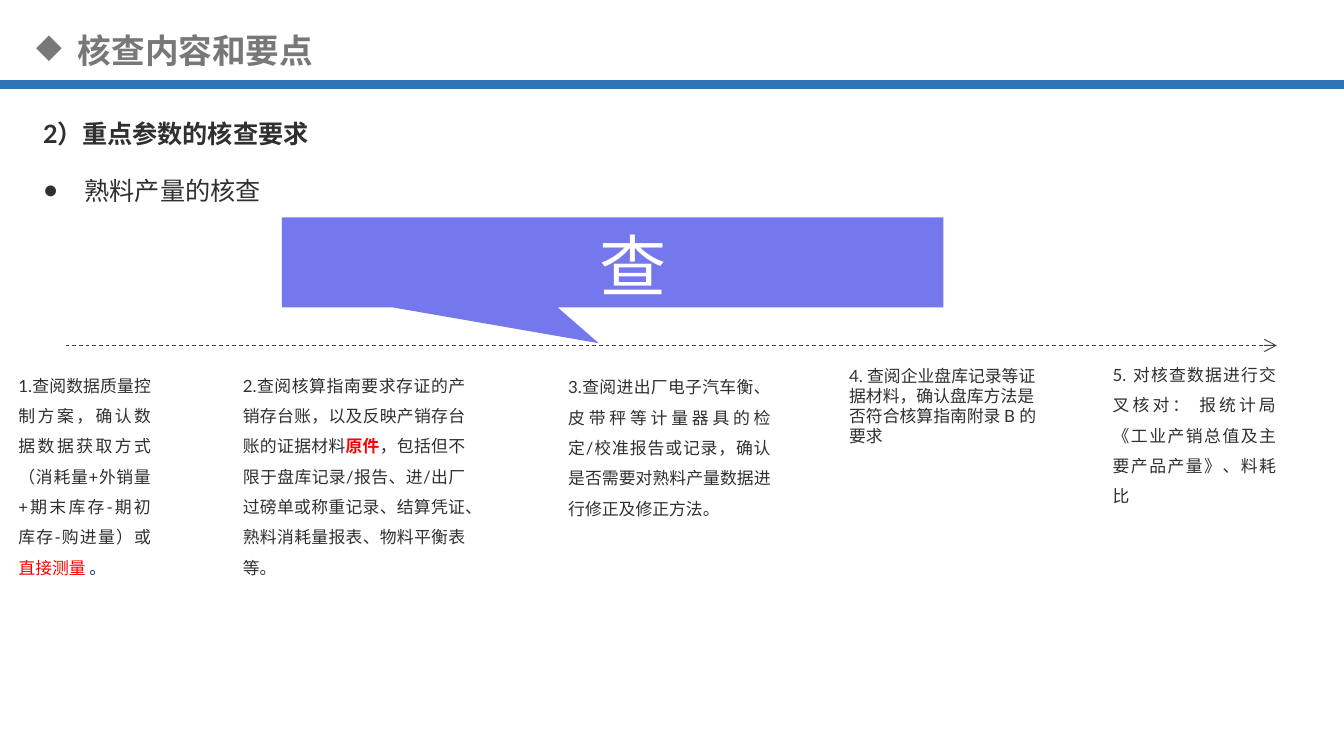
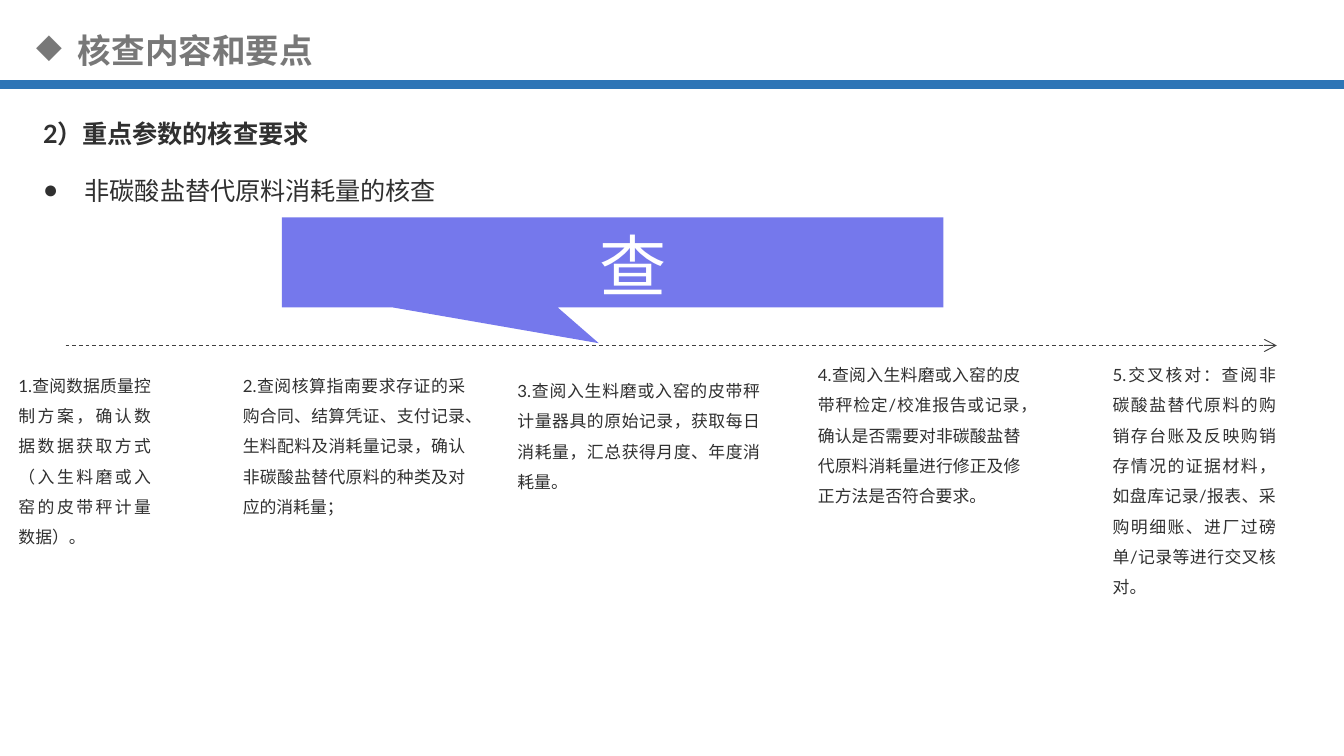
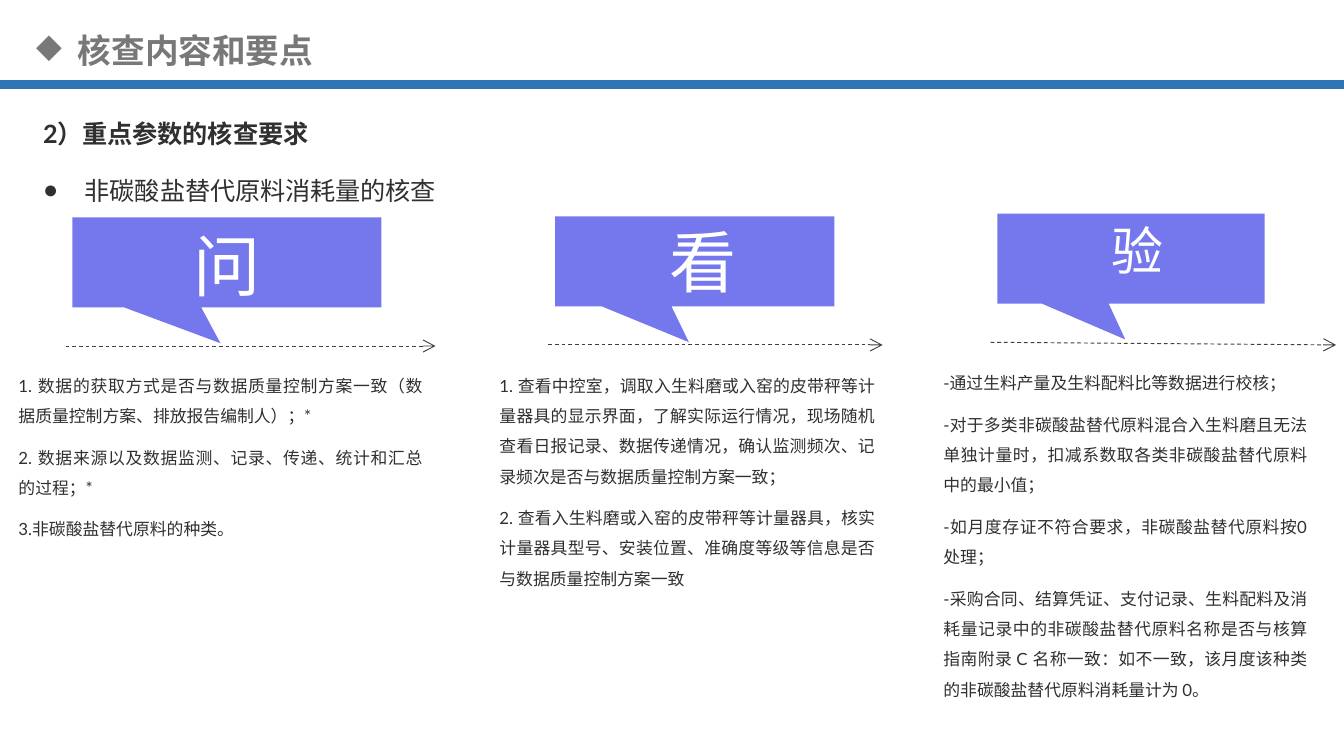
import pptx
import pptx.dml.color
import pptx.enum.dml
import pptx.enum.lang
import pptx.enum.shapes
import pptx.enum.text
import pptx.oxml
import pptx.oxml.ns
import pptx.util

Cm, Pt = pptx.util.Cm, pptx.util.Pt
RGBColor = pptx.dml.color.RGBColor
PP_ALIGN = pptx.enum.text.PP_ALIGN
ANCHOR = pptx.enum.text.MSO_ANCHOR
AUTO = pptx.enum.text.MSO_AUTO_SIZE
qn = pptx.oxml.ns.qn

TITLE_GREY = RGBColor(0x78, 0x78, 0x78)
BAND_BLUE = RGBColor(0x2E, 0x75, 0xB6)
INK = RGBColor(0x30, 0x30, 0x30)
RED = RGBColor(0xFF, 0x00, 0x00)
VIOLET = RGBColor(0x75, 0x78, 0xEC)
ARROW_GREY = RGBColor(0x40, 0x40, 0x40)
WHITE = RGBColor(0xFF, 0xFF, 0xFF)

CJK_FONT = "Noto Sans CJK SC"
SLIDE_W, SLIDE_H = 25.4, 14.29
INDENT = 0.79
CHINESE = pptx.enum.lang.MSO_LANGUAGE_ID.SIMPLIFIED_CHINESE

TITLE_FONT = dict(name="Arial", size=Pt(18), bold=True, color=TITLE_GREY)
HEADING_FONT = dict(name="Lato", size=Pt(13.5), bold=True, color=INK)
TOPIC_FONT = dict(HEADING_FONT, bold=False)
NOTE_FONT = dict(name="Lato", size=Pt(9), bold=False, color=INK)
WORD_FONT = dict(name=CJK_FONT, size=Pt(36), bold=False, color=WHITE)

PLAIN = dict(alignment=PP_ALIGN.LEFT, line_spacing=1.0)
CENTRED = dict(PLAIN, alignment=PP_ALIGN.CENTER)
JUSTIFIED = dict(alignment=PP_ALIGN.JUSTIFY, line_spacing=1.5)
FRAME = dict(word_wrap=True, auto_size=AUTO.SHAPE_TO_FIT_TEXT,
             vertical_anchor=ANCHOR.TOP)

TITLE = "核查内容和要点"
HEADING = "2）重点参数的核查要求"


def apply(obj, formats):
    for name, value in formats.items():
        setattr(obj, name, value)


def place(sp, box):
    apply(sp, dict(zip(("left", "top", "width", "height"), map(Cm, box))))


def add_run(p, text, fmt):
    r = p.add_run()
    r.text = text
    r.font.color.rgb = fmt["color"]
    apply(r.font, {k: v for k, v in fmt.items() if k != "color"})
    r.font.language_id = CHINESE
    ea = r.font._element.makeelement(qn("a:ea"), {"typeface": CJK_FONT})
    r.font._element.append(ea)


def set_bullet(p, char=None):
    """Give the paragraph a hanging bullet, or none."""
    pPr = p._p.get_or_add_pPr()
    indent = Cm(INDENT) if char else 0
    pPr.set("marL", str(indent))
    pPr.set("indent", str(-indent))
    tag, attrs = ("a:buChar", {"char": char}) if char else ("a:buNone", {})
    pPr.append(pPr.makeelement(qn(tag), attrs))


def next_paragraph(tf, i, layout):
    p = tf.add_paragraph() if i else tf.paragraphs[0]
    apply(p, dict(layout, space_before=Pt(6 if i else 0)))
    return p


def add_line(s, start, end, color, width):
    line = s.shapes.add_connector(pptx.enum.shapes.MSO_CONNECTOR.STRAIGHT,
                                  *map(Cm, (*start, *end)))
    line.line.color.rgb = color
    line.line.width = Pt(width)
    spPr = line._element.spPr
    spPr.append(spPr.makeelement(qn("a:effectLst"), {}))
    return line


def add_header(s, topic):
    tf = s.shapes.title.text_frame
    place(s.shapes.title, (0.43, 0.43, 24.51, 1.02))
    apply(tf, FRAME)
    p = next_paragraph(tf, 0, PLAIN)
    set_bullet(p, "◆")
    add_run(p, TITLE, TITLE_FONT)

    add_line(s, (0, 1.6), (SLIDE_W, 1.6), BAND_BLUE, 4.5)

    body = s.placeholders[1]
    place(body, (0.56, 1.83, 23.57, 2.11))
    apply(body.text_frame, FRAME)
    lines = ((HEADING, None, HEADING_FONT), (topic, "●", TOPIC_FONT))
    for i, (text, bullet, fmt) in enumerate(lines):
        p = next_paragraph(body.text_frame, i, JUSTIFIED)
        set_bullet(p, bullet)
        add_run(p, text, fmt)


def add_text(s, box, paragraphs, fmt=NOTE_FONT, layout=JUSTIFIED, frame=FRAME):
    """Each paragraph is a string or a list of (text, format changes)."""
    tf = s.shapes.add_textbox(*map(Cm, box)).text_frame
    apply(tf, frame)
    for i, runs in enumerate(paragraphs):
        p = next_paragraph(tf, i, layout)
        for text, changes in [(runs, {})] if isinstance(runs, str) else runs:
            add_run(p, text, {**fmt, **changes})


def add_callout(s, box, word, word_shift, word_w, size=36, layout=PLAIN):
    x, y, w, h = box
    dx, dy = word_shift
    sp = s.shapes.add_shape(
        pptx.enum.shapes.MSO_SHAPE.RECTANGULAR_CALLOUT, *map(Cm, box))
    sp.adjustments[0], sp.adjustments[1] = -0.021, 0.899
    sp.shadow.inherit = False
    sp.fill.solid()
    sp.fill.fore_color.rgb = VIOLET
    sp.line.fill.background()
    add_text(s, (x + dx, y + dy, word_w, 1.63), [word],
             dict(WORD_FONT, size=Pt(size)), layout,
             dict(FRAME, auto_size=AUTO.NONE))


def add_flow_arrow(s, start, end):
    line = add_line(s, start, end, ARROW_GREY, 0.5).line
    line.dash_style = pptx.enum.dml.MSO_LINE.DASH
    ln = line._get_or_add_ln()
    ln.append(ln.makeelement(qn("a:tailEnd"), {"type": "arrow"}))


def new_slide(prs, topic):
    s = prs.slides.add_slide(prs.slide_layouts[1])
    add_header(s, topic)
    return s


def document_check_slide(prs, topic, notes):
    """One wide callout over an arrow, with a row of numbered notes."""
    s = new_slide(prs, topic)
    add_callout(s, (5.33, 4.11, 12.5, 1.7), "查", (2.04, 0), 9.19,
                layout=CENTRED)
    add_flow_arrow(s, (1.24, 6.53), (24.13, 6.53))
    for box, runs, layout in notes:
        add_text(s, box, [runs], layout=layout)


def method_panel(s, box, word, shift, word_w, size, arrow, note_box, notes):
    """Callout in the box; arrow is (length, rise); note_box is offset from it."""
    x, y, w, h = box
    add_callout(s, box, word, shift, word_w, size)
    start = x - 0.13, y + 2.43
    add_flow_arrow(s, start, (start[0] + arrow[0], start[1] + arrow[1]))
    dx, dy, note_w, note_h = note_box
    add_text(s, (x + dx, y + dy, note_w, note_h), notes)


CLINKER_NOTES = [
    ((0.1, 6.78, 3, 4.22), [
        ("1.查阅数据质量控制方案，确认数据数据获取方式（消耗量+外销量+期末库存-期初库存-购进量）或", {}),
        ("直接测量", dict(color=RED)),
        (" 。", {})], JUSTIFIED),
    ((4.34, 6.78, 4.7, 4.22), [
        ("2.查阅核算指南要求存证的产销存台账，以及反映产销存台账的证据材料", {}),
        ("原件", dict(color=RED, bold=True)),
        ("，包括但不限于盘库记录/报告、进/出厂过磅单或称重记录、结算凭证、"
         "熟料消耗量报表、物料平衡表等。", {})], JUSTIFIED),
    ((10.49, 6.81, 4.32, 3.07),
     "3.查阅进出厂电子汽车衡、皮带秤等计量器具的检定/校准报告或记录，"
     "确认是否需要对熟料产量数据进行修正及修正方法。", JUSTIFIED),
    ((15.8, 6.78, 4.06, 1.8),
     "4. 查阅企业盘库记录等证据材料，确认盘库方法是否符合核算指南附录 B 的要求", PLAIN),
    ((20.78, 6.58, 3.58, 3.07),
     "5. 对核查数据进行交叉核对： 报统计局《工业产销总值及主要产品产量》、料耗比",
     JUSTIFIED),
]

SUBSTITUTE_NOTES = [
    ((0.1, 6.78, 3, 3.66),
     "1.查阅数据质量控制方案，确认数据数据获取方式（入生料磨或入窑的皮带秤计量数据）。",
     JUSTIFIED),
    ((4.34, 6.78, 4.7, 3.07),
     "2.查阅核算指南要求存证的采购合同、结算凭证、支付记录、生料配料及消耗量记录，"
     "确认非碳酸盐替代原料的种类及对应的消耗量；", JUSTIFIED),
    ((9.53, 6.88, 5.08, 2.49),
     "3.查阅入生料磨或入窑的皮带秤计量器具的原始记录，获取每日消耗量，"
     "汇总获得月度、年度消耗量。", JUSTIFIED),
    ((15.21, 6.58, 4.32, 3.07),
     "4.查阅入生料磨或入窑的皮带秤检定/校准报告或记录，确认是否需要对非碳酸盐"
     "替代原料消耗量进行修正及修正方法是否符合要求。", JUSTIFIED),
    ((20.78, 6.58, 3.58, 4.8),
     "5.交叉核对：查阅非碳酸盐替代原料的购销存台账及反映购销存情况的证据材料，"
     "如盘库记录/报表、采购明细账、进厂过磅单/记录等进行交叉核对。", JUSTIFIED),
]

METHODS = [
    ((1.37, 4.11, 5.84, 1.7), "问", (2.03, 0), 2.03, 36, (6.99, 0),
     (-1.27, 2.67, 8.13, 3.51), [
        "1. 数据的获取方式是否与数据质量控制方案一致（数据质量控制方案、排放报告编制人）；*",
        "2. 数据来源以及数据监测、记录、传递、统计和汇总的过程；*",
        "3.非碳酸盐替代原料的种类。"]),
    ((10.49, 4.09, 5.28, 1.7), "看", (1.91, -0.05), 1.83, 36, (6.32, 0),
     (-1.3, 2.69, 7.59, 4.45), [
        "1. 查看中控室，调取入生料磨或入窑的皮带秤等计量器具的显示界面，了解实际运行情况，"
        "现场随机查看日报记录、数据传递情况，确认监测频次、记录频次是否与数据质量控制方案一致；",
        "2. 查看入生料磨或入窑的皮带秤等计量器具，核实计量器具型号、安装位置、"
        "准确度等级等信息是否与数据质量控制方案一致"]),
    ((18.85, 4.04, 5.05, 1.7), "验", (1.9, -0.03), 1.75, 27.8, (6.53, 0.05),
     (-1.27, 2.69, 7.37, 6.6), [
        "-通过生料产量及生料配料比等数据进行校核；",
        "-对于多类非碳酸盐替代原料混合入生料磨且无法单独计量时，"
        "扣减系数取各类非碳酸盐替代原料中的最小值；",
        "-如月度存证不符合要求，非碳酸盐替代原料按0处理；",
        "-采购合同、结算凭证、支付记录、生料配料及消耗量记录中的非碳酸盐替代原料名称"
        "是否与核算指南附录 C 名称一致：如不一致，该月度该种类的非碳酸盐替代原料消耗量计为 0。"]),
]


def main():
    prs = pptx.Presentation()
    prs.slide_width, prs.slide_height = Cm(SLIDE_W), Cm(SLIDE_H)
    substitute_topic = "非碳酸盐替代原料消耗量的核查"
    document_check_slide(prs, "熟料产量的核查", CLINKER_NOTES)
    document_check_slide(prs, substitute_topic, SUBSTITUTE_NOTES)
    s = new_slide(prs, substitute_topic)
    for method in METHODS:
        method_panel(s, *method)
    prs.save("out.pptx")


if __name__ == "__main__":
    main()
